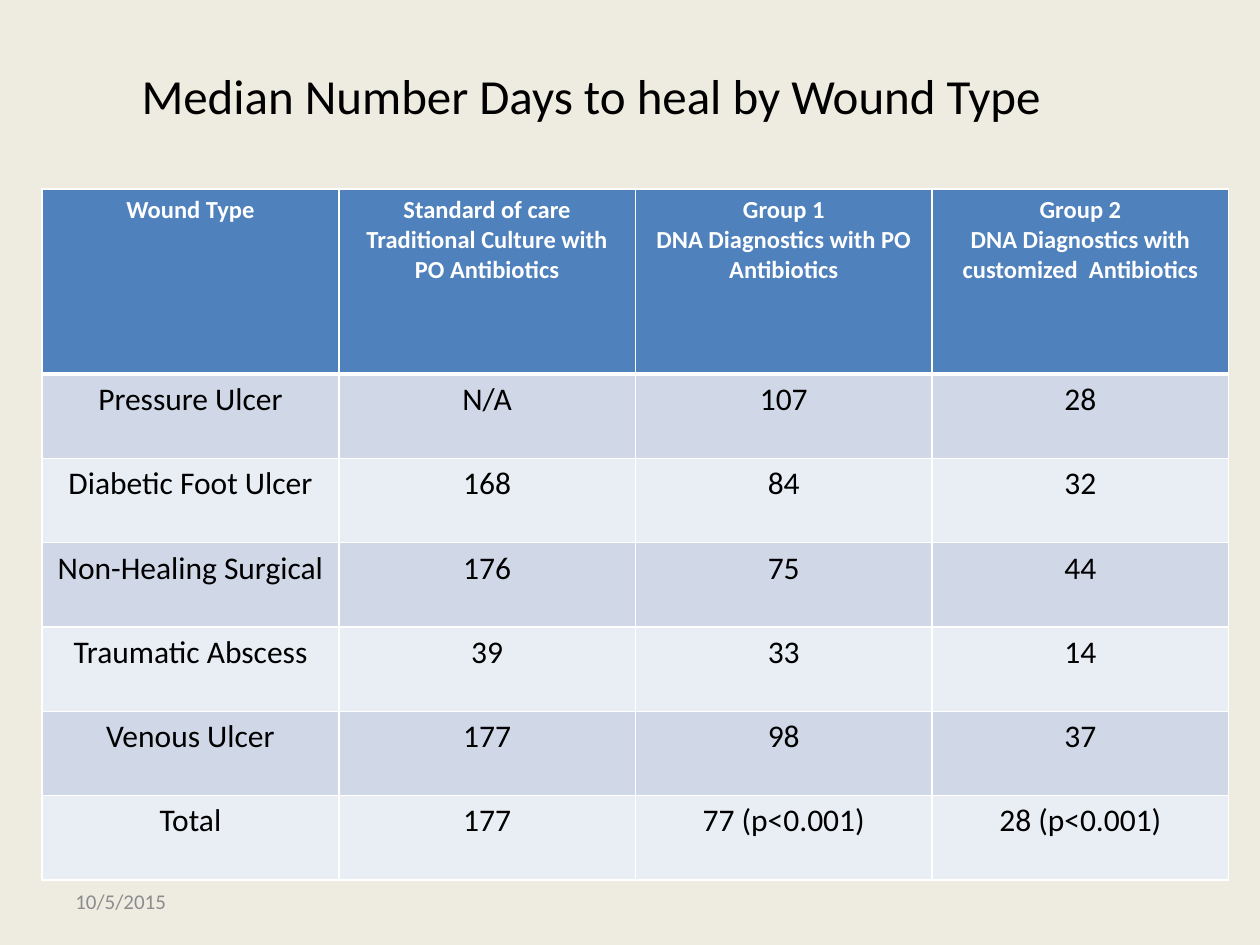
from pptx import Presentation
from pptx.dml.color import RGBColor as Rgb
from pptx.enum.text import MSO_ANCHOR as Anchor, PP_ALIGN as Align
from pptx.oxml import parse_xml
from pptx.oxml.ns import nsdecls
from pptx.util import Cm, Pt

hues = {
    "page": "EEECE1", "head": "4F81BD", "odd": "D0D8E8", "even": "E9EDF4",
    "line": "FFFFFF", "light": "FFFFFF", "dark": "000000", "date": "8C8C8C",
}


def write(frame, lines, size, hue, bold=False, align=Align.CENTER):
    for i, line in enumerate(lines):
        para = frame.paragraphs[0] if i == 0 else frame.add_paragraph()
        para.alignment = align
        run = para.add_run()
        run.text = line
        font = run.font
        font.name, font.size, font.bold = "Calibri", Pt(size), bold
        font.color.rgb = Rgb.from_string(hues[hue])


def edge(cell, side, width):
    cell._tc.get_or_add_tcPr().append(parse_xml(
        f'<a:ln{side} {nsdecls("a")} w="{Pt(width)}"><a:solidFill>'
        f'<a:srgbClr val="{hues["line"]}"/></a:solidFill></a:ln{side}>'))


# Page
deck = Presentation()
deck.slide_width, deck.slide_height = Cm(25.4), Cm(19.05)
slide = deck.slides.add_slide(deck.slide_layouts[6])
back = slide.background.fill
back.solid()
back.fore_color.rgb = Rgb.from_string(hues["page"])

# Title and date
texts = [
    ("Median Number Days to heal by Wound Type",
     (1.12, 0.64, 21.59, 2.54), 28, "dark", Align.CENTER),
    ("10/5/2015", (1.27, 17.65, 5.92, 1.02), 12, "date", Align.LEFT),
]
for text, place, size, hue, align in texts:
    frame = slide.shapes.add_textbox(*map(Cm, place)).text_frame
    frame.word_wrap = True
    frame.vertical_anchor = Anchor.MIDDLE
    write(frame, [text], size, hue, align=align)

# Table of healing days
rows = [
    ["Wound Type",
     "Standard of care\nTraditional Culture with PO Antibiotics",
     "Group 1\nDNA Diagnostics with PO Antibiotics",
     "Group 2\nDNA Diagnostics with customized  Antibiotics"],
    ["Pressure Ulcer", "N/A", "107", "28"],
    ["Diabetic Foot Ulcer", "168", "84", "32"],
    ["Non-Healing Surgical", "176", "75", "44"],
    ["Traumatic Abscess", "39", "33", "14"],
    ["Venous Ulcer", "177", "98", "37"],
    ["Total", "177", "77 (p<0.001)", "28 (p<0.001)"],
]
table = slide.shapes.add_table(
    len(rows), 4, Cm(0.85), Cm(3.81), Cm(23.92), Cm(13.95)).table
for col in table.columns:
    col.width = Cm(5.98)

for r, row in enumerate(rows):
    head = r == 0
    table.rows[r].height = Cm(3.73 if head else 1.7)
    shade = "head" if head else "odd" if r % 2 else "even"
    for c, text in enumerate(row):
        cell = table.cell(r, c)
        write(cell.text_frame, text.split("\n"), 14 if head else 18,
              "light" if head else "dark", head)
        # A thick rule parts the header from the body
        for side in "LRTB":
            thick = (r, side) in [(0, "B"), (1, "T")]
            edge(cell, side, 3 if thick else 1)
        cell.fill.solid()
        cell.fill.fore_color.rgb = Rgb.from_string(hues[shade])

deck.save("out.pptx")
